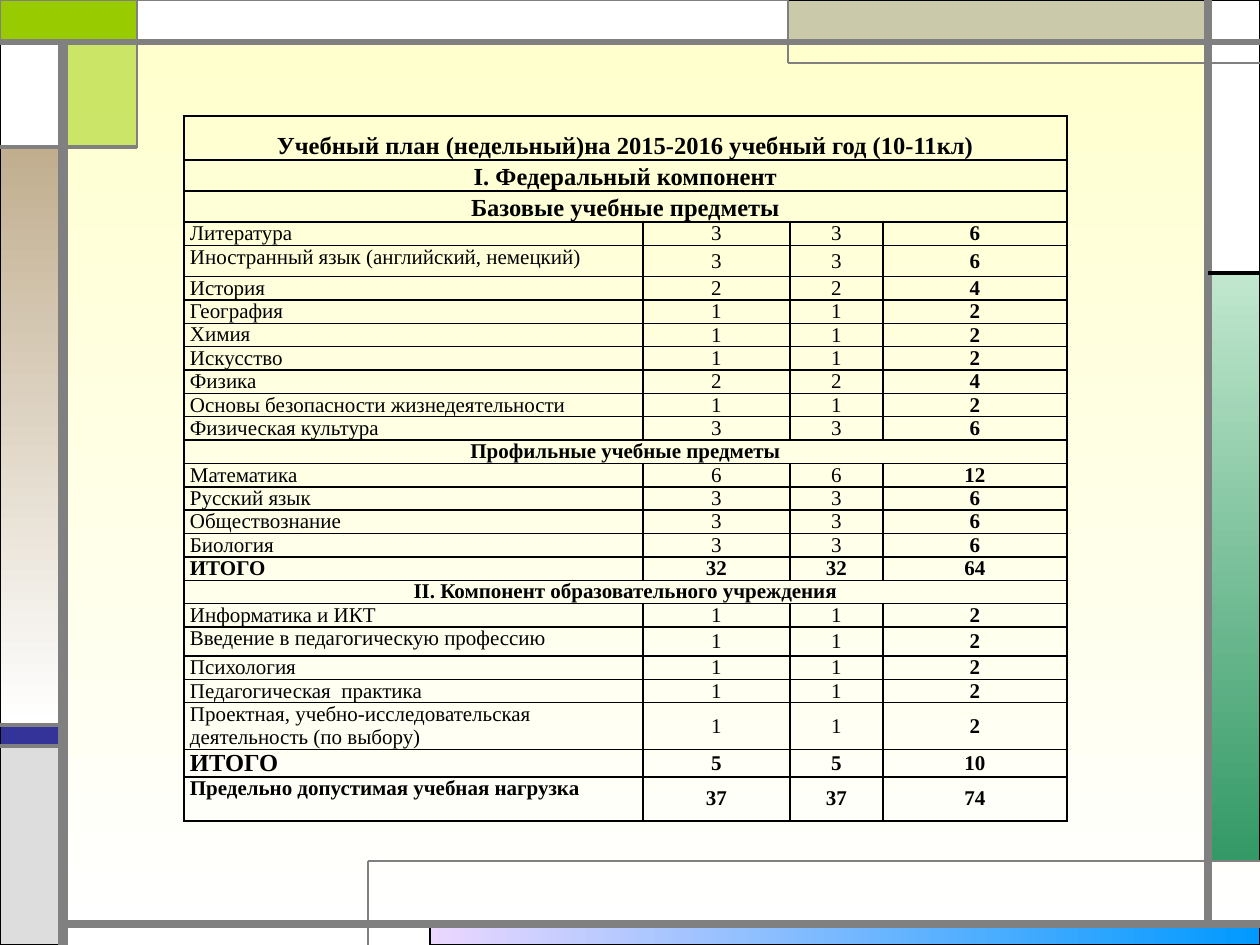
from lxml import etree
from pptx import Presentation, util as u
from pptx.dml.color import RGBColor
from pptx.enum import shapes, text
from pptx.oxml import parse_xml
from pptx.oxml.ns import nsdecls, qn

PX = u.Inches(1) / 126
WIDE, HIGH = 1260, 945
# Grid lines of the frame
LEFT, RIGHT, TOP, BASE = 63, 1208, 42, 924

BLACK = RGBColor(0x00, 0x00, 0x00)
WHITE = RGBColor(0xFF, 0xFF, 0xFF)
GRAY = RGBColor(0x80, 0x80, 0x80)
SILVER = RGBColor(0xDD, 0xDD, 0xDD)
CREAM = RGBColor(0xFF, 0xFF, 0xCC)
LILAC = RGBColor(0xEB, 0xD7, 0xFF)
SKY = RGBColor(0x00, 0x99, 0xFF)
MINT = RGBColor(0xC1, 0xE7, 0xCE)
GREEN = RGBColor(0x33, 0x99, 0x66)
NAVY = RGBColor(0x33, 0x33, 0x99)
KHAKI = RGBColor(0xCA, 0xC9, 0xAA)
LIME = RGBColor(0x99, 0xCC, 0x00)
TAN = RGBColor(0xC1, 0xAE, 0x8F)

# left, top, right, bottom, fill (a pair is a gradient), gradient angle
RECTS = [
    (430, BASE, WIDE, HIGH, (LILAC, SKY), 0),
    (RIGHT, 273, WIDE, 861, (MINT, GREEN), 270),
    (0, 725, LEFT, 746, NAVY, 0),
    (0, 746, LEFT, HIGH, SILVER, 0),
    (RIGHT, 0, WIDE, 273, WHITE, 0),
    (788, 0, RIGHT, TOP, KHAKI, 0),
    (0, 147, LEFT, 725, (TAN, WHITE), 270),
    (0, TOP, LEFT, 147, WHITE, 0),
]

# x1, y1, x2, y2, width in points
LINES = [
    (LEFT, HIGH, LEFT, TOP, 6),
    (LEFT, BASE, WIDE, BASE, 4.5),
    (RIGHT, BASE, RIGHT, 0, 4.5),
    (0, TOP, WIDE, TOP, 3),
    (WIDE, 63, 788, 63, 1.5),
    (788, 63, 788, 0, 1.5),
    (137, 0, 137, 147, 1.5),
    (137, 147, 0, 147, 2.25),
    (368, HIGH, 368, 861, 1.5),
    (368, 861, WIDE, 861, 1.5),
    (LEFT, 725, 0, 725, 2.25),
    (LEFT, 746, 0, 746, 2.25),
]

COLS = [459, 147, 93, 184]
ROW = 23
# label, hours in each of the two years (None is a heading), row height
PLAN = [
    ("Учебный план (недельный)на 2015-2016 учебный год (10-11кл)", None, 44),
    ("I. Федеральный компонент", None, 31),
    ("Базовые учебные предметы", None, 31),
    ("Литература", 3, ROW),
    ("Иностранный язык (английский, немецкий)", 3, 31),
    ("История", 2, ROW),
    ("География", 1, ROW),
    ("Химия", 1, ROW),
    ("Искусство", 1, ROW),
    ("Физика", 2, ROW),
    ("Основы безопасности жизнедеятельности", 1, ROW),
    ("Физическая культура", 3, ROW),
    ("Профильные учебные предметы", None, ROW),
    ("Математика", 6, ROW),
    ("Русский язык", 3, ROW),
    ("Обществознание", 3, ROW),
    ("Биология", 3, ROW),
    ("ИТОГО", 32, ROW),
    ("II. Компонент образовательного учреждения", None, ROW),
    ("Информатика и ИКТ", 1, ROW),
    ("Введение в педагогическую профессию", 1, 29),
    ("Психология", 1, ROW),
    ("Педагогическая  практика", 1, ROW),
    ("Проектная, учебно-исследовательская деятельность (по выбору)", 1, 47),
    ("ИТОГО", 5, 27),
    ("Предельно допустимая учебная нагрузка", 37, 44),
]
TOTALS = (17, 24, 25)
BIG = (0, 1, 2)


def px(n):
    return u.Emu(round(n * PX))


def blend(fill, pair, angle):
    fill.gradient()
    fill.gradient_angle = angle
    for stop, color in zip(fill.gradient_stops, pair):
        stop.color.rgb = color


class Deck:
    font = "Times New Roman"

    def __init__(self):
        self.prs = Presentation()
        self.prs.slide_width, self.prs.slide_height = px(WIDE), px(HIGH)
        self.slide = self.prs.slides.add_slide(self.prs.slide_layouts[6])
        blend(self.slide.background.fill, (CREAM, WHITE), 270)

    def rect(self, x1, y1, x2, y2, fill, angle=0, edge=BLACK, width=0.75):
        box = self.slide.shapes.add_shape(
            shapes.MSO_SHAPE.RECTANGLE, px(x1), px(y1), px(x2 - x1), px(y2 - y1))
        box.shadow.inherit = False
        if isinstance(fill, RGBColor):
            box.fill.solid()
            box.fill.fore_color.rgb = fill
        else:
            blend(box.fill, fill, angle)
        box.line.color.rgb = edge
        box.line.width = u.Pt(width)
        return box

    def line(self, x1, y1, x2, y2, width, color=GRAY):
        rule = self.slide.shapes.add_connector(
            shapes.MSO_CONNECTOR.STRAIGHT, px(x1), px(y1), px(x2), px(y2))
        rule.line.color.rgb = color
        rule.line.width = u.Pt(width)
        etree.SubElement(rule._element.spPr, qn("a:effectLst"))

    def table(self, x, y, cols, rows):
        grid = self.slide.shapes.add_table(
            len(rows), len(cols), px(x), px(y), px(sum(cols)), px(sum(rows))).table
        grid.first_row = grid.horz_banding = False
        for col, width in zip(grid.columns, cols):
            col.width = px(width)
        for row, height in zip(grid.rows, rows):
            row.height = px(height)
        return grid

    def cell(self, cell, label, size=12, bold=False, center=True,
             anchor=text.MSO_ANCHOR.MIDDLE, gap=1.0):
        for side in "LRTB":
            cell._tc.get_or_add_tcPr().append(parse_xml(
                f'<a:ln{side} {nsdecls("a")} w="{u.Pt(1)}"><a:solidFill>'
                f'<a:srgbClr val="{BLACK}"/></a:solidFill></a:ln{side}>'))
        cell.fill.background()
        cell.margin_left = cell.margin_right = px(6)
        cell.margin_top = cell.margin_bottom = 0
        cell.vertical_anchor = anchor
        cell.text = label
        par = cell.text_frame.paragraphs[0]
        par.alignment = text.PP_ALIGN.CENTER if center else text.PP_ALIGN.LEFT
        par.line_spacing = gap
        par.font.name, par.font.size, par.font.bold = self.font, u.Pt(size), bold
        par.font.color.rgb = BLACK


def frame(deck):
    for spot in RECTS:
        deck.rect(*spot)
    pale = deck.rect(LEFT, TOP, 137, 147, LIME)
    tint = pale._element.spPr.find(qn("a:solidFill")).find(qn("a:srgbClr"))
    etree.SubElement(tint, qn("a:alpha"), val="50000")
    deck.rect(0, 0, 137, TOP, LIME, edge=GRAY, width=1.5)
    deck.rect(137, 0, 788, TOP, WHITE, edge=GRAY)
    for spot in LINES:
        deck.line(*spot)
    deck.line(RIGHT, 273, WIDE, 273, 2.25, BLACK)


def plan(deck):
    grid = deck.table(184, 116, COLS, [high for _, _, high in PLAN])
    for r, (label, hours, _) in enumerate(PLAN):
        cells = [grid.cell(r, c) for c in range(len(COLS))]
        if hours is None:
            cells[0].merge(cells[-1])
            big = r in BIG
            values = ["", "", ""]
            style = dict(size=14 if big else 12, bold=True, gap=1.15 if big else 1.0,
                         anchor=text.MSO_ANCHOR.BOTTOM if big else text.MSO_ANCHOR.TOP)
        else:
            values = [str(hours), str(hours), str(2 * hours)]
            style = dict(size=14 if r == 24 else 12, bold=r in TOTALS, center=False,
                         anchor=text.MSO_ANCHOR.TOP)
        deck.cell(cells[0], label, **style)
        for c, value in enumerate(values, 1):
            deck.cell(cells[c], value, bold=r in TOTALS or c == 3)


def main():
    deck = Deck()
    frame(deck)
    plan(deck)
    deck.prs.save("out.pptx")


if __name__ == "__main__":
    main()
